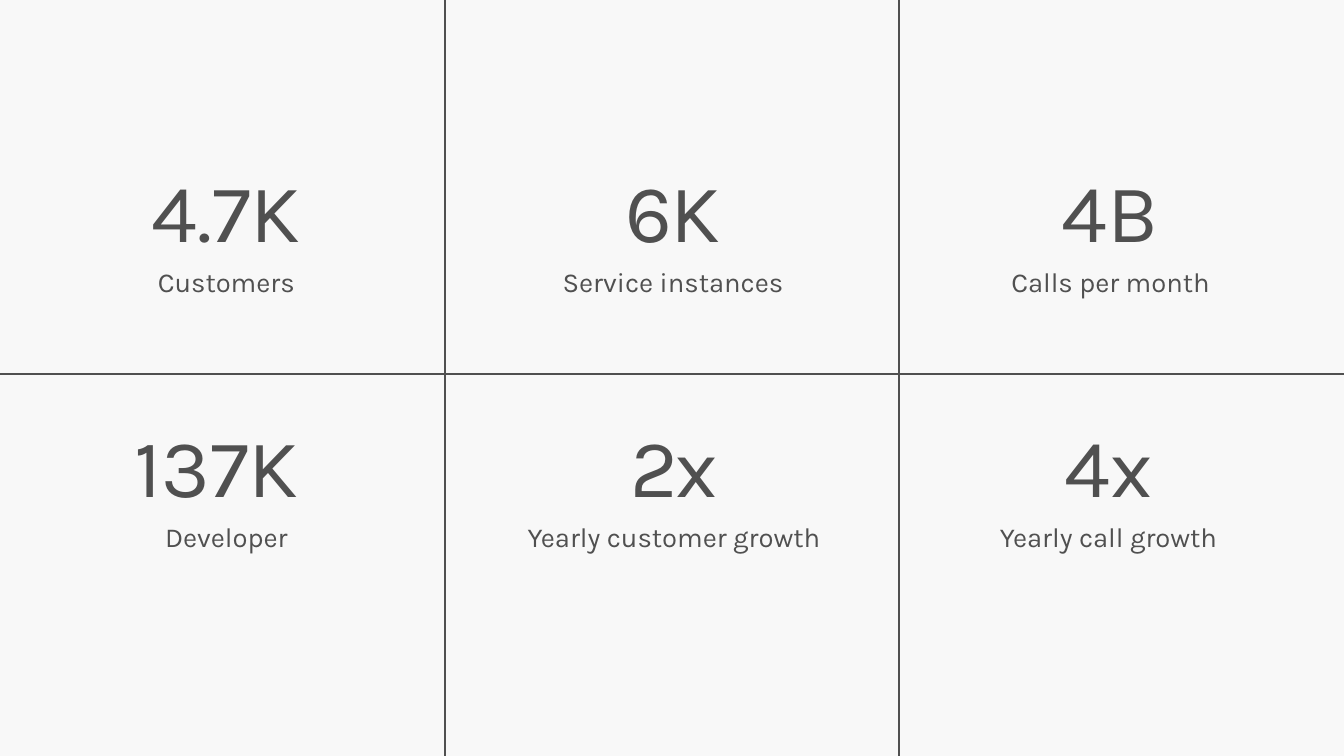
"""Build a slide with six key figures in a ruled grid."""
from typing import NamedTuple

from lxml import etree
from pptx import Presentation
from pptx.dml.color import RGBColor
from pptx.enum.shapes import MSO_CONNECTOR
from pptx.enum.text import MSO_AUTO_SIZE, PP_ALIGN
from pptx.oxml.ns import qn
from pptx.slide import Slide
from pptx.util import Inches, Pt

WIDE, HIGH = 13.33, 7.5
GREY = RGBColor(0x50, 0x50, 0x50)
PALE = RGBColor(0xF8, 0xF8, 0xF8)
FONT = "Karla"
CENTER = PP_ALIGN.CENTER
FIT = MSO_AUTO_SIZE.SHAPE_TO_FIT_TEXT
STRAIGHT = MSO_CONNECTOR.STRAIGHT
TOP, LOW = 1.54, 4.07
BOX_HIGH = 1.59


class Stat(NamedTuple):
    left: float
    top: float
    width: float
    value: str
    label: str
    space: float = 0


class Rule(NamedTuple):
    x1: float
    y1: float
    x2: float
    y2: float


STATS = (
    Stat(0.18, TOP, 4.13, "4.7K", "Customers"),
    Stat(4.61, TOP, 4.13, "6K", "Service instances", -2.1),
    Stat(8.95, TOP, 4.13, "4B", "Calls per month"),
    Stat(0.18, LOW, 4.13, "137K ", "Developer"),
    Stat(4.44, LOW, 4.49, "2x", "Yearly customer growth", -2.1),
    Stat(9.36, LOW, 3.27, "4x", "Yearly call growth"),
)
RULES = (
    Rule(4.41, 0, 4.41, HIGH),
    Rule(8.92, 0, 8.92, HIGH),
    Rule(0, 3.71, WIDE, 3.71),
)


def draw_rule(slide: Slide, rule: Rule) -> None:
    line = slide.shapes.add_connector(STRAIGHT, *map(Inches, rule))
    line.line.color.rgb = GREY
    line.line.width = Pt(1.5)
    etree.SubElement(line._element.spPr, qn("a:effectLst"))


def draw_stat(slide: Slide, stat: Stat) -> None:
    place = (stat.left, stat.top, stat.width, BOX_HIGH)
    frame = slide.shapes.add_textbox(*map(Inches, place)).text_frame
    frame.word_wrap = True
    frame.auto_size = FIT
    frame.margin_left = frame.margin_right = Inches(0.2)
    frame.margin_top = frame.margin_bottom = Inches(0.16)
    lines = (
        (frame.paragraphs[0], stat.value, 58.8, stat.space),
        (frame.add_paragraph(), stat.label, 19.6, 0),
    )
    for para, text, size, space in lines:
        para.alignment = CENTER
        para.line_spacing = 0.9
        para.space_after = Pt(5.9)
        run = para.add_run()
        run.text = text
        run.font.name = FONT
        run.font.size = Pt(size)
        run.font.color.rgb = GREY
        if space:
            run._r.get_or_add_rPr().set("spc", str(round(space * 100)))


def main() -> None:
    deck = Presentation()
    deck.slide_width, deck.slide_height = Inches(WIDE), Inches(HIGH)
    slide = deck.slides.add_slide(deck.slide_layouts.get_by_name("Blank"))
    fill = slide.background.fill
    fill.solid()
    fill.fore_color.rgb = PALE
    for rule in RULES:
        draw_rule(slide, rule)
    for stat in STATS:
        draw_stat(slide, stat)
    deck.save("out.pptx")


if __name__ == "__main__":
    main()
